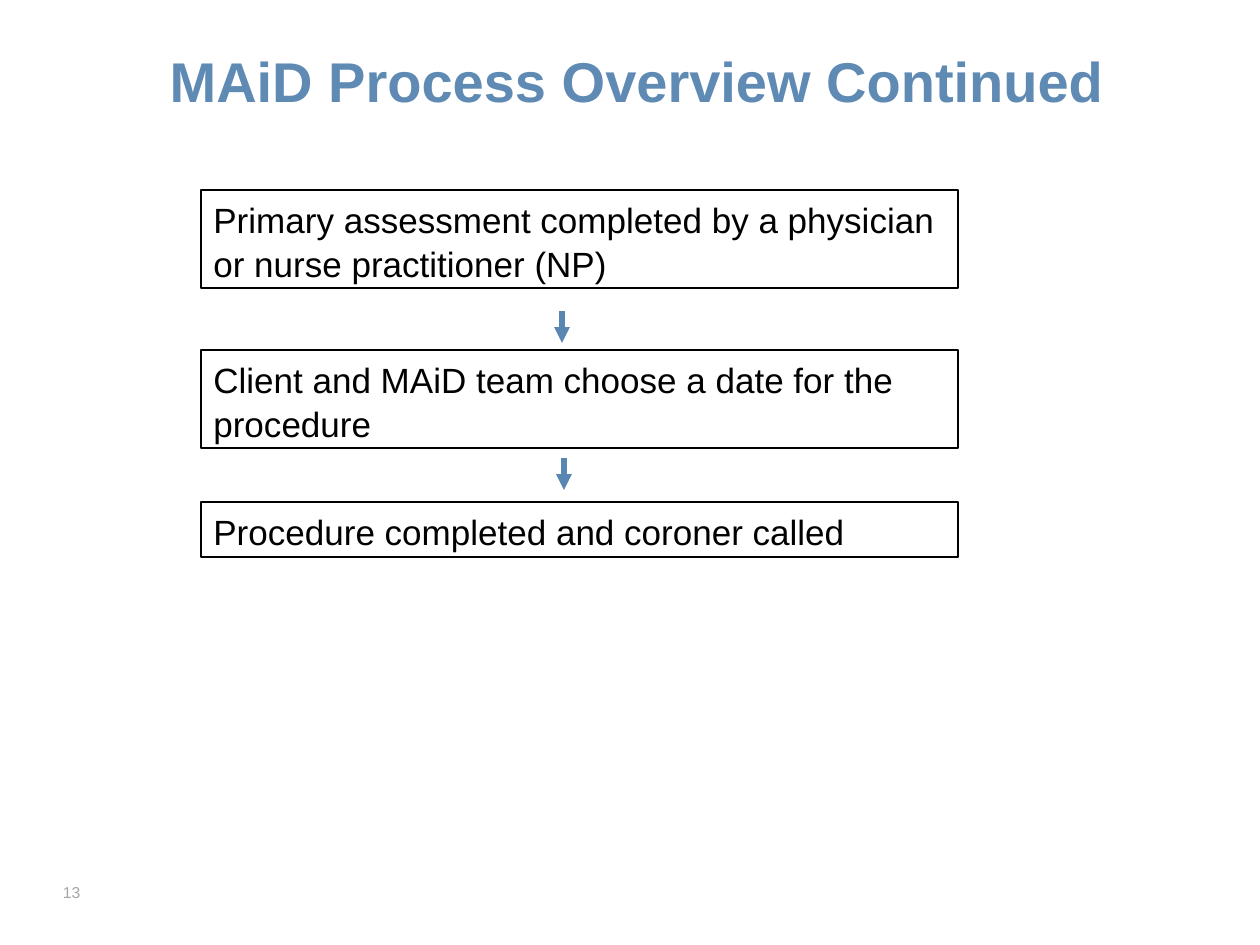
import pptx
import pptx.util
import pptx.dml.color
import pptx.enum.shapes
import pptx.enum.text
import pptx.oxml.ns
from lxml import etree

THEME = {
    "font": "Arial",
    "title": ("5E8AB4", 32),
    "step": ("000000", 20),
    "number": ("A6A6A6", 9),
    "arrow": "5A87B2",
}
PX_PER_INCH = 126


def px(*lengths):
    return [round(n * 914400 / PX_PER_INCH) for n in lengths]


def write(frame, text, role):
    colour, size = THEME[role]
    frame.word_wrap = True
    paragraph = frame.paragraphs[0]
    paragraph.text = text
    paragraph.font.name = THEME["font"]
    paragraph.font.size = pptx.util.Pt(size)
    paragraph.font.color.rgb = pptx.dml.color.RGBColor.from_string(colour)
    if role != "step":
        frame.margin_left = frame.margin_right = 0
        frame.margin_top = frame.margin_bottom = 0
    return paragraph


deck = pptx.Presentation()
deck.slide_width, deck.slide_height = px(1260, 945)
slide = deck.slides.add_slide(deck.slide_layouts[5])

# Title
title = slide.shapes.title
title.left, title.top, title.width, title.height = px(63, 47, 1148, 96)
heading = write(title.text_frame, "MAiD Process Overview Continued", "title")
heading.font.bold = True
heading.alignment = pptx.enum.text.PP_ALIGN.CENTER
title.text_frame.vertical_anchor = pptx.enum.text.MSO_ANCHOR.TOP

# Process steps: top, height, wording
steps = [
    (190, 98, "Primary assessment completed by a physician or nurse practitioner (NP)"),
    (350, 98, "Client and MAiD team choose a date for the procedure"),
    (502, 55, "Procedure completed and coroner called"),
]
for top, height, wording in steps:
    step = slide.shapes.add_shape(
        pptx.enum.shapes.MSO_SHAPE.RECTANGLE, *px(201, top, 757, height))
    step.shadow.inherit = False
    step.fill.background()
    step.line.color.rgb = pptx.dml.color.RGBColor.from_string(THEME["step"][0])
    step.line.width = pptx.util.Pt(0.75)
    paragraph = write(step.text_frame, wording, "step")
    paragraph.alignment = pptx.enum.text.PP_ALIGN.LEFT
    paragraph.line_spacing = 1.05
    step.text_frame.vertical_anchor = pptx.enum.text.MSO_ANCHOR.TOP
    step.text_frame.auto_size = pptx.enum.text.MSO_AUTO_SIZE.SHAPE_TO_FIT_TEXT

# Arrows between the steps
for x, top in [(562, 311), (564, 458)]:
    arrow = slide.shapes.add_connector(
        pptx.enum.shapes.MSO_CONNECTOR.STRAIGHT, *px(x, top, x, top + 32))
    arrow.line.color.rgb = pptx.dml.color.RGBColor.from_string(THEME["arrow"])
    arrow.line.width = pptx.util.Pt(3)
    etree.SubElement(arrow.line._get_or_add_ln(),
                     pptx.oxml.ns.qn("a:tailEnd"), type="triangle")
    etree.SubElement(arrow._element.spPr, pptx.oxml.ns.qn("a:effectLst"))

# Slide number
number = slide.shapes.add_textbox(*px(63, 823, 252, 79)).text_frame
write(number, "13", "number")
number.vertical_anchor = pptx.enum.text.MSO_ANCHOR.BOTTOM

deck.save("out.pptx")
